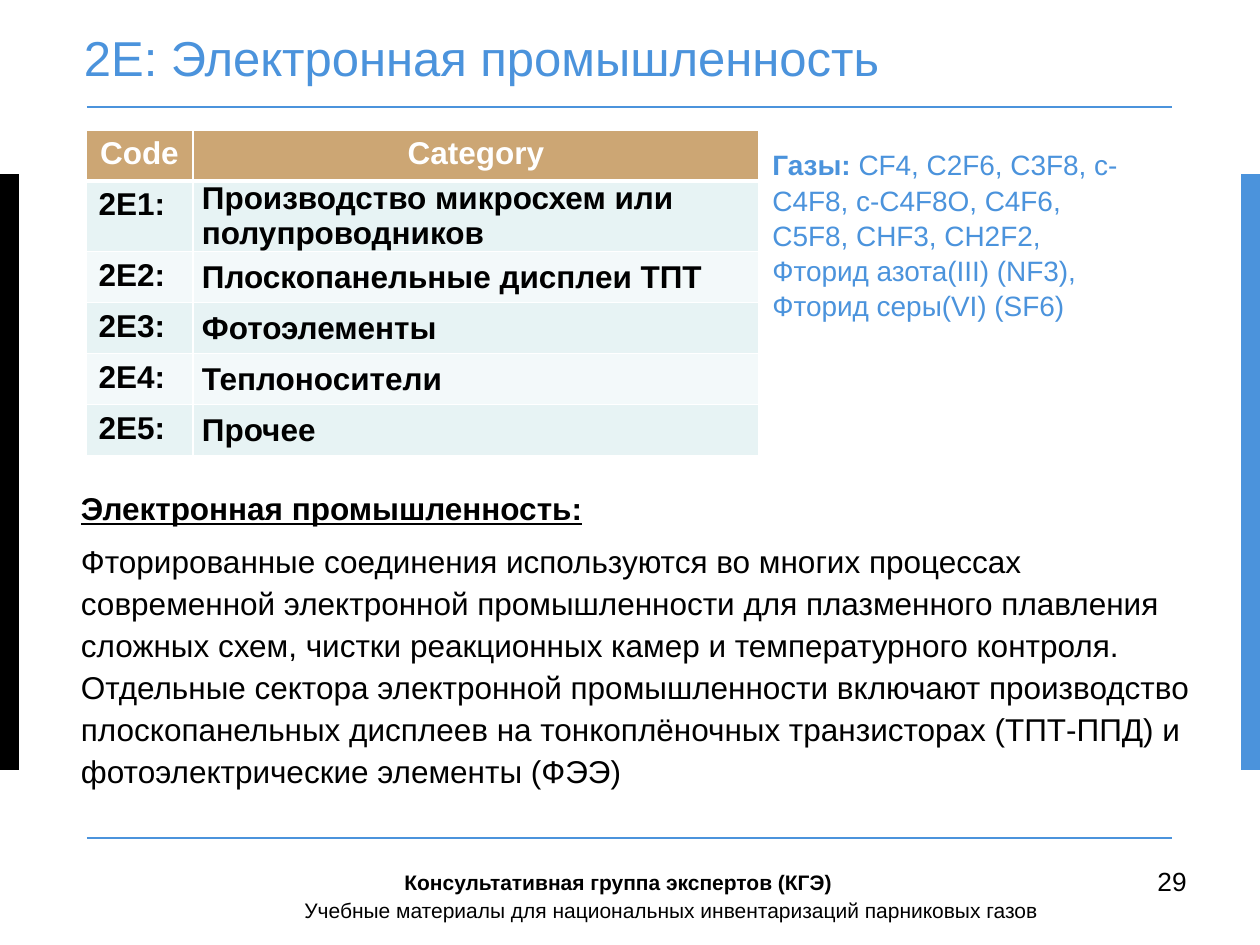
from typing import NamedTuple

import pptx
import pptx.dml.color
import pptx.enum.shapes
import pptx.enum.text
import pptx.oxml
import pptx.oxml.ns
import pptx.util

EMU_PER_PX = 914400 / 126
FONT = "Arial"
BLACK, WHITE, BLUE, TAN = "000000", "FFFFFF", "4B93DC", "CCA674"
BANDS = ("E7F3F4", "F3F9FA")
MIDDLE = pptx.enum.text.MSO_ANCHOR.MIDDLE
CENTER = pptx.enum.text.PP_ALIGN.CENTER


class Box(NamedTuple):
    left: int
    top: int
    width: int
    height: int


class Run(NamedTuple):
    text: str
    size: int
    color: str = BLACK
    bold: bool = False
    underline: bool = False


class TextBlock(NamedTuple):
    box: Box
    paragraphs: list[list[Run]]
    line_spacing: float | pptx.util.Length | None = None
    space_before: int = 0
    inset: bool = True
    anchor: pptx.enum.text.MSO_ANCHOR = pptx.enum.text.MSO_ANCHOR.TOP


BARS = [(Box(0, 174, 19, 596), BLACK), (Box(1241, 174, 19, 596), BLUE)]
RULE_LEFT, RULE_RIGHT, RULE_TOPS = 87, 1172, (107, 838)

TEXTS = [
    TextBlock(Box(84, 20, 1091, 106),
              [[Run("2E: Электронная промышленность", 28, BLUE)]],
              line_spacing=pptx.util.Pt(15), inset=False, anchor=MIDDLE),
    TextBlock(Box(81, 485, 1124, 323),
              [[Run("Электронная промышленность:", 18, bold=True, underline=True)],
               [Run("Фторированные соединения используются во многих процессах "
                    "современной электронной промышленности для плазменного плавления "
                    "сложных схем, чистки реакционных камер и температурного контроля. "
                    "Отдельные сектора электронной промышленности включают производство "
                    "плоскопанельных дисплеев на тонкоплёночных транзисторах (ТПТ-ППД) "
                    "и фотоэлектрические элементы (ФЭЭ)", 18)]],
              line_spacing=pptx.util.Pt(24), space_before=6, inset=False),
    TextBlock(Box(760, 140, 394, 210),
              [[Run("Газы: ", 16, BLUE, bold=True),
                Run("CF4, C2F6, C3F8, c-C4F8, c-C4F8O, C4F6, C5F8, CHF3, CH2F2, "
                    "Фторид азота(III) (NF3), Фторид серы(VI) (SF6)", 16, BLUE)]],
              line_spacing=1.05),
    TextBlock(Box(1145, 859, 59, 44), [[Run("29", 15)]]),
    TextBlock(Box(292, 896, 791, 8),
              [[Run("Учебные материалы для национальных инвентаризаций "
                    "парниковых газов", 12)]]),
    TextBlock(Box(392, 863, 486, 34),
              [[Run("Консультативная группа экспертов (КГЭ)", 12, bold=True)]]),
]

TABLE_LEFT, TABLE_TOP = 86, 130
COLUMN_WIDTHS = (107, 566)
ROW_HEIGHTS = (51, 70, 51, 51, 51, 51)
CATEGORIES = [
    ("Code", "Category"),
    ("2E1:", "Производство микросхем или полупроводников"),
    ("2E2:", "Плоскопанельные дисплеи ТПТ"),
    ("2E3:", "Фотоэлементы"),
    ("2E4:", "Теплоносители"),
    ("2E5:", "Прочее"),
]


def px(n: int) -> pptx.util.Emu:
    return pptx.util.Emu(round(n * EMU_PER_PX))


def rgb(color: str) -> pptx.dml.color.RGBColor:
    return pptx.dml.color.RGBColor.from_string(color)


def style_run(r, run: Run) -> None:
    r.font.name = FONT
    r.font.size = pptx.util.Pt(run.size)
    r.font.bold = run.bold
    r.font.underline = run.underline
    r.font.color.rgb = rgb(run.color)


def add_bar(s, box: Box, color: str) -> None:
    sp = s.shapes.add_shape(pptx.enum.shapes.MSO_SHAPE.RECTANGLE, *map(px, box))
    sp.shadow.inherit = False
    sp.fill.solid()
    sp.fill.fore_color.rgb = rgb(color)
    sp.line.fill.background()


def add_rule(s, top: int) -> None:
    sp = s.shapes.add_connector(pptx.enum.shapes.MSO_CONNECTOR.STRAIGHT,
                                px(RULE_LEFT), px(top), px(RULE_RIGHT), px(top))
    sp.line.color.rgb = rgb(BLUE)
    sp.line.width = pptx.util.Pt(1)
    pptx.oxml.ns.qn("a:effectLst")
    sp._element.spPr.append(pptx.oxml.parse_xml(
        f"<a:effectLst {pptx.oxml.ns.nsdecls('a')}/>"))


def add_text(s, block: TextBlock) -> None:
    tf = s.shapes.add_textbox(*map(px, block.box)).text_frame
    tf.word_wrap = True
    tf.vertical_anchor = block.anchor
    if not block.inset:
        tf.margin_left = tf.margin_top = tf.margin_right = tf.margin_bottom = 0
    for i, runs in enumerate(block.paragraphs):
        p = tf.add_paragraph() if i else tf.paragraphs[0]
        p.line_spacing = block.line_spacing
        if i:
            p.space_before = pptx.util.Pt(block.space_before)
        for run in runs:
            r = p.add_run()
            r.text = run.text
            style_run(r, run)


def set_borders(cell, row: int) -> None:
    """White grid lines, thicker between the header and the first row."""
    top, bottom = (3 if row == 1 else 1), (3 if row == 0 else 1)
    sides = [("lnL", 1), ("lnR", 1), ("lnT", top), ("lnB", bottom)]
    for i, (tag, width) in enumerate(sides):
        cell._tc.get_or_add_tcPr().insert(i, pptx.oxml.parse_xml(
            f'<a:{tag} {pptx.oxml.ns.nsdecls("a")} w="{pptx.util.Pt(width)}">'
            f'<a:solidFill><a:srgbClr val="{WHITE}"/></a:solidFill></a:{tag}>'))


def fill_cell(cell, text: str, row: int, column: int) -> None:
    header = row == 0
    cell.text_frame.text = text
    p = cell.text_frame.paragraphs[0]
    style_run(p.runs[0], Run(text, 18, WHITE if header else BLACK, bold=True))
    if header:
        p.alignment = CENTER
    elif column == 1:
        cell.vertical_anchor = MIDDLE
        cell.margin_left = cell.margin_right = px(9)
        cell.margin_top = cell.margin_bottom = 0
    cell.fill.solid()
    cell.fill.fore_color.rgb = rgb(TAN if header else BANDS[(row - 1) % 2])
    set_borders(cell, row)


def add_category_table(s) -> None:
    box = Box(TABLE_LEFT, TABLE_TOP, sum(COLUMN_WIDTHS), sum(ROW_HEIGHTS))
    table = s.shapes.add_table(len(ROW_HEIGHTS), len(COLUMN_WIDTHS),
                               *map(px, box)).table
    for column, width in zip(table.columns, COLUMN_WIDTHS):
        column.width = px(width)
    for i, (height, texts) in enumerate(zip(ROW_HEIGHTS, CATEGORIES)):
        table.rows[i].height = px(height)
        for j, text in enumerate(texts):
            fill_cell(table.cell(i, j), text, i, j)


def main() -> None:
    prs = pptx.Presentation()
    prs.slide_width, prs.slide_height = px(1260), px(945)
    s = prs.slides.add_slide(prs.slide_layouts[6])
    for box, color in BARS:
        add_bar(s, box, color)
    for top in RULE_TOPS:
        add_rule(s, top)
    add_category_table(s)
    for block in TEXTS:
        add_text(s, block)
    prs.save("out.pptx")


if __name__ == "__main__":
    main()
